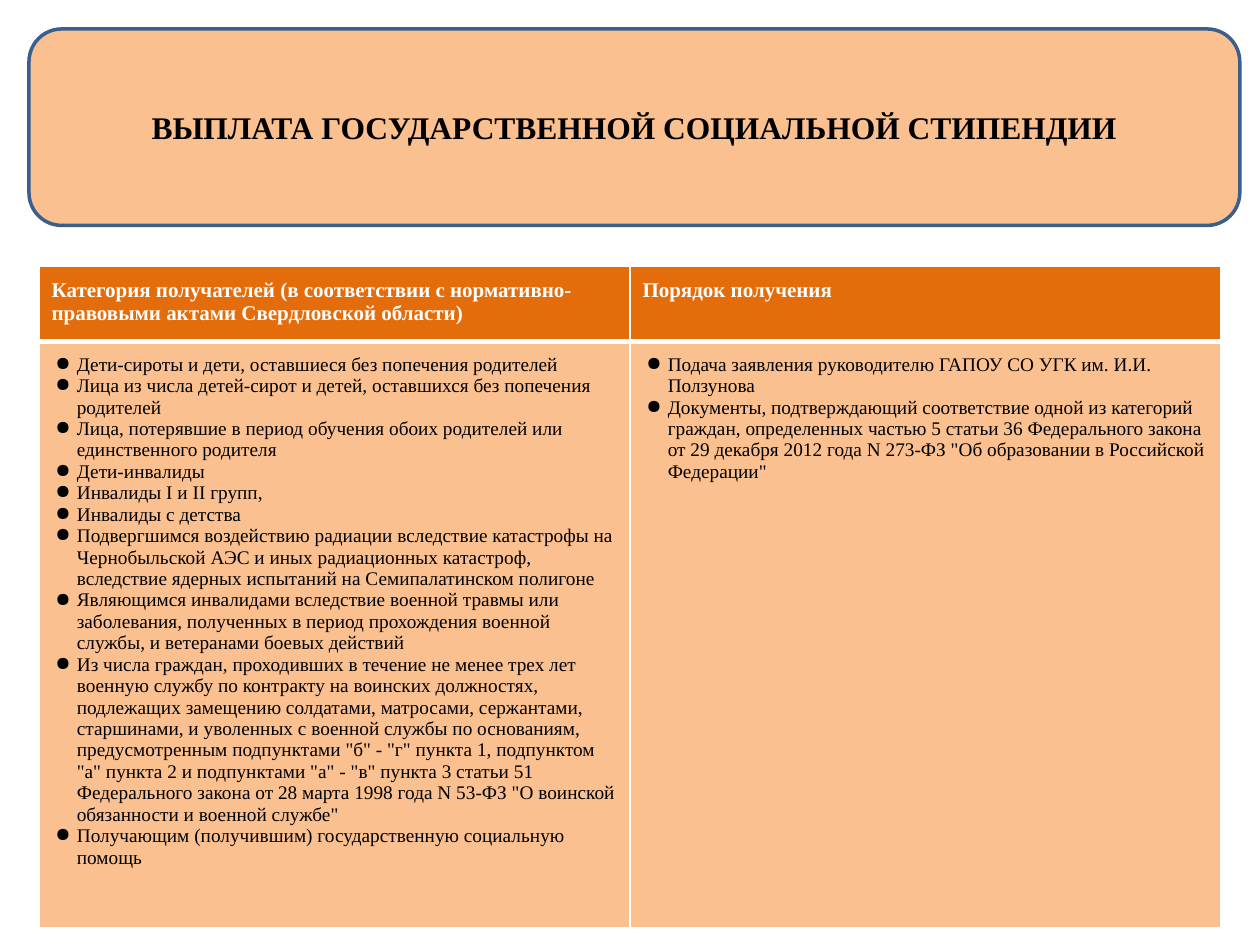
import pptx
import pptx.dml.color
import pptx.enum.shapes
import pptx.enum.text
import pptx.oxml
import pptx.oxml.ns
import pptx.util
from pptx.util import Inches

COLORS = {
    "header": "E46C0A",
    "panel": "FAC090",
    "outline": "3A5F8C",
    "white": "FFFFFF",
    "black": "000000",
}
FONT = "Times New Roman"

TITLE = "ВЫПЛАТА ГОСУДАРСТВЕННОЙ СОЦИАЛЬНОЙ СТИПЕНДИИ"
HEADERS = [
    "Категория получателей (в соответствии с нормативно-правовыми актами Свердловской области)",
    "Порядок получения",
]
RECIPIENTS = [
    "Дети-сироты и дети, оставшиеся без попечения родителей",
    "Лица из числа детей-сирот и детей, оставшихся без попечения родителей",
    "Лица, потерявшие в период обучения обоих родителей или единственного родителя",
    "Дети-инвалиды",
    "Инвалиды I и II групп,",
    "Инвалиды с детства",
    "Подвергшимся воздействию радиации вследствие катастрофы на Чернобыльской АЭС "
    "и иных радиационных катастроф, вследствие ядерных испытаний на Семипалатинском полигоне",
    "Являющимся инвалидами вследствие военной травмы или заболевания, полученных "
    "в период прохождения военной службы, и ветеранами боевых действий",
    "Из числа граждан, проходивших в течение не менее трех лет военную службу по контракту "
    "на воинских должностях, подлежащих замещению солдатами, матросами, сержантами, "
    "старшинами, и уволенных с военной службы по основаниям, предусмотренным подпунктами "
    '"б" - "г" пункта 1, подпунктом "а" пункта 2 и подпунктами "а" - "в" пункта 3 статьи 51 '
    'Федерального закона от 28 марта 1998 года N 53-ФЗ "О воинской обязанности и военной службе"',
    "Получающим (получившим) государственную социальную помощь",
]
PROCEDURE = [
    "Подача заявления руководителю ГАПОУ СО УГК им. И.И. Ползунова",
    "Документы, подтверждающий соответствие одной из категорий граждан, определенных "
    "частью 5 статьи 36 Федерального закона от 29 декабря 2012 года N 273-ФЗ "
    '"Об образовании в Российской Федерации"',
]


def rgb(name):
    return pptx.dml.color.RGBColor.from_string(COLORS[name])


class SlideBuilder:
    def __init__(self, slide):
        self.slide = slide

    def format_runs(self, paragraph, size, color, bold=False):
        for run in paragraph.runs:
            run.font.name = FONT
            run.font.size = pptx.util.Pt(size)
            run.font.bold = bold
            run.font.color.rgb = rgb(color)

    def panel(self, box):
        shape = self.slide.shapes.add_shape(
            pptx.enum.shapes.MSO_SHAPE.ROUNDED_RECTANGLE, *box)
        shape.shadow.inherit = False
        shape.fill.solid()
        shape.fill.fore_color.rgb = rgb("panel")
        shape.line.color.rgb = rgb("outline")
        shape.line.width = pptx.util.Pt(2)

    def title(self, text, box):
        self.panel(box)
        title = self.slide.shapes.title
        title.left, title.top, title.width, title.height = box
        # Bring the title in front of its panel
        self.slide.shapes.element.append(title.element)
        text_frame = title.text_frame
        text_frame.text = text
        text_frame.word_wrap = True
        text_frame.auto_size = pptx.enum.text.MSO_AUTO_SIZE.NONE
        text_frame.vertical_anchor = pptx.enum.text.MSO_ANCHOR.MIDDLE
        paragraph = text_frame.paragraphs[0]
        paragraph.alignment = pptx.enum.text.PP_ALIGN.CENTER
        self.format_runs(paragraph, 18, "black", bold=True)

    def borders(self, cell, widths):
        properties = cell._tc.get_or_add_tcPr()
        for side, width in widths.items():
            properties.append(pptx.oxml.parse_xml(
                f'<a:ln{side} {pptx.oxml.ns.nsdecls("a")} w="{pptx.util.Pt(width)}">'
                f'<a:solidFill><a:srgbClr val="{COLORS["white"]}"/></a:solidFill>'
                f'</a:ln{side}>'))

    def bullet(self, paragraph):
        properties = paragraph._p.get_or_add_pPr()
        properties.set("marL", str(Inches(0.2)))
        properties.set("indent", str(Inches(-0.17)))
        properties.append(pptx.oxml.parse_xml(
            f'<a:buChar {pptx.oxml.ns.nsdecls("a")} char="●"/>'))

    def cell(self, cell, lines, is_header):
        cell.margin_left = cell.margin_right = Inches(0.1)
        cell.margin_top = cell.margin_bottom = Inches(0.1)
        top, bottom = (1, 3) if is_header else (3, 1)
        self.borders(cell, {"L": 1, "R": 1, "T": top, "B": bottom})
        cell.fill.solid()
        cell.fill.fore_color.rgb = rgb("header" if is_header else "panel")
        cell.text_frame.text = "\n".join(lines)
        for paragraph in cell.text_frame.paragraphs:
            if is_header:
                self.format_runs(paragraph, 12, "white", bold=True)
            else:
                self.bullet(paragraph)
                self.format_runs(paragraph, 11, "black")

    def table(self, rows, box, heights):
        table = self.slide.shapes.add_table(len(rows), len(rows[0]), *box).table
        table.horz_banding = False
        for row, height in zip(table.rows, heights):
            row.height = Inches(height)
        for row_index, row in enumerate(rows):
            for column_index, lines in enumerate(row):
                self.cell(table.cell(row_index, column_index), lines, row_index == 0)


def main():
    presentation = pptx.Presentation()
    presentation.slide_width = Inches(10)
    presentation.slide_height = Inches(7.5)
    builder = SlideBuilder(presentation.slides.add_slide(presentation.slide_layouts[5]))

    # Title on a rounded panel
    builder.title(TITLE, (Inches(0.23), Inches(0.23), Inches(9.61), Inches(1.56)))

    # Recipients and procedure
    rows = [[[header] for header in HEADERS], [RECIPIENTS, PROCEDURE]]
    builder.table(rows, (Inches(0.31), Inches(2.11), Inches(9.38), Inches(5.25)),
                  heights=[0.6, 4.65])

    presentation.save("out.pptx")


if __name__ == "__main__":
    main()
